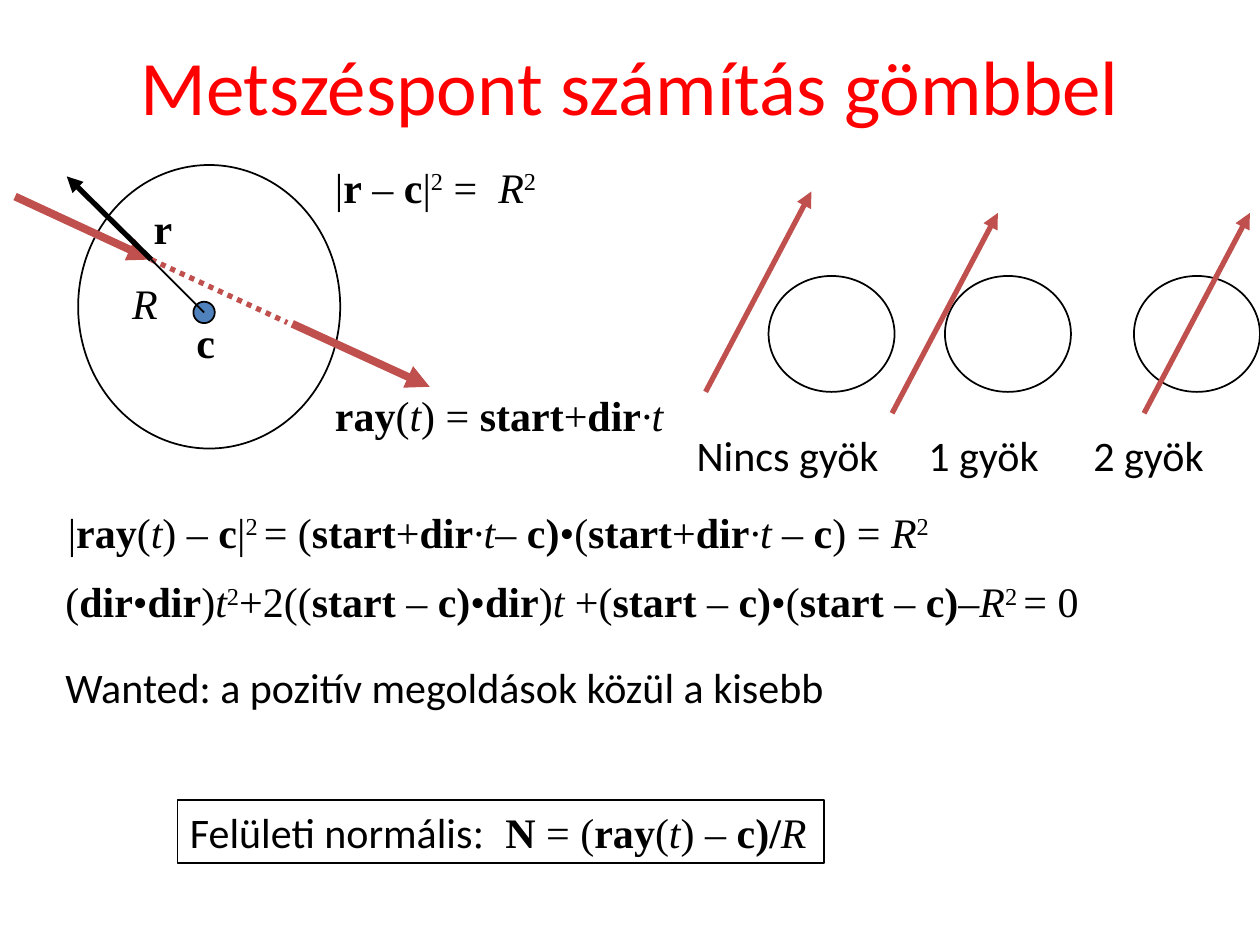
import pptx
import pptx.util
import pptx.dml.color
import pptx.enum.dml
import pptx.enum.shapes
import pptx.enum.text
import pptx.oxml
import pptx.oxml.ns
from pptx.util import Inches

THEME = {
    "title": "FF0000", "ink": "000000", "ray": "C0504D", "center": "4F81BD",
    "sans": "Calibri", "serif": "Times New Roman",
    "title_size": 44, "body_size": 24,
    "thin": 1, "medium": 3, "thick": 4.5,
}

TITLE = "Metszéspont számítás gömbbel"
SPHERE = [("|", ""), ("r", "b"), (" – ", ""), ("c", "b"), ("|", ""), ("2", "^"),
          (" =  ", ""), ("R", "i"), ("2", "^")]
RAY_T = [("ray", "b"), ("(", ""), ("t", "i"), (")", "")]
START_DIR = [("start", "b"), ("+", ""), ("dir", "b"), ("·t", "i")]
START_C = [("start ", "b"), ("– ", ""), ("c)", "b")]
DIR = [("dir", "b")]
DOT = [("•", "")]
RAY = RAY_T + [(" = ", "")] + START_DIR
SUBSTITUTED = ([("|", "")] + RAY_T + [(" – ", ""), ("c", "b"), ("|", ""), ("2 ", "^"), ("= (", "")]
               + START_DIR + [("– ", ""), ("c)", "b"), ("•(", "")]
               + START_DIR + [(" – ", ""), ("c", "b"), (") = ", ""), ("R", "i"), ("2", "^")])
QUADRATIC = ([("(", "")] + DIR + DOT + DIR + [(")", ""), ("t", "i"), ("2", "^"), ("+2((", "")]
             + START_C + DOT + DIR + [(")", ""), ("t ", "i"), ("+(", "")]
             + START_C + [("•(", "")] + START_C
             + [("–", ""), ("R", "i"), ("2 ", "^"), ("= 0", "")])
WANTED = [("Wanted: a pozitív megoldások közül a kisebb", "s")]
NORMAL = ([("Felületi normális", "s"), (":  ", ""), ("N", "b"), (" = (", "")] + RAY_T
          + [(" – ", ""), ("c)/", "b"), ("R", "i")])

LABELS = [
    ([("c", "b")], (1.46, 2.46, 0.35, 0.5)),
    ([("R", "i")], (0.95, 2.15, 0.4, 0.5)),
    (SPHERE, (2.56, 1.23, 1.84, 0.51)),
    ([("r", "b")], (1.12, 1.56, 0.35, 0.5)),
    (RAY, (2.56, 3.04, 2.83, 0.5)),
]
HIT = (1.2, 2.06)
CENTER = (1.62, 2.48)
DOT_SIZE = 0.17
SPHERE_LINES = [
    ((0.12, 1.56), HIT, "ray", "thick", True, False),
    ((2.32, 2.57), (3.41, 3.07), "ray", "thick", True, False),
    (HIT, (2.28, 2.56), "ray", "medium", False, True),
    (HIT, CENTER, "ink", "thin", False, False),
    (HIT, (0.53, 1.4), "ink", "medium", True, False),
]
CASES = [
    ("Nincs gyök", 5.43, 1.65, 6.1, (5.6, 3.11)),
    ("1 gyök", 7.27, 1.1, 7.5, (7.08, 3.28)),
    ("2 gyök", 8.58, 1.1, 9.0, (9.08, 3.28)),
]
CASE_RAY = (0.84, -1.59)

prs = pptx.Presentation()
prs.slide_width, prs.slide_height = Inches(10), Inches(7.5)
s = prs.slides.add_slide(prs.slide_layouts[6])


def color(name):
    return pptx.dml.color.RGBColor.from_string(THEME[name])


def add_runs(p, runs, size="body_size", ink="ink"):
    for text, style in runs:
        r = p.add_run()
        r.text = text
        r.font.name = THEME["sans" if "s" in style else "serif"]
        r.font.size = pptx.util.Pt(THEME[size])
        r.font.color.rgb = color(ink)
        r.font.bold = "b" in style
        r.font.italic = "i" in style
        if "^" in style:
            r._r.get_or_add_rPr().set("baseline", "30000")


def add_text(paragraphs, box, wrap=True):
    sp = s.shapes.add_textbox(*map(Inches, box))
    tf = sp.text_frame
    tf.word_wrap = wrap
    for i, runs in enumerate(paragraphs):
        p = tf.add_paragraph() if i else tf.paragraphs[0]
        add_runs(p, runs)
    return tf


def add_outline(kind, box, fill=None):
    sp = s.shapes.add_shape(kind, *map(Inches, box))
    sp.shadow.inherit = False
    if fill:
        sp.fill.solid()
        sp.fill.fore_color.rgb = color(fill)
    else:
        sp.fill.background()
    sp.line.color.rgb = color("ink")
    sp.line.width = pptx.util.Pt(THEME["thin"])
    return sp


def add_line(start, end, ink, width, arrow=True, dotted=False):
    c = s.shapes.add_connector(pptx.enum.shapes.MSO_CONNECTOR.STRAIGHT,
                               *map(Inches, start + end))
    c.line.color.rgb = color(ink)
    c.line.width = pptx.util.Pt(THEME[width])
    if dotted:
        c.line.dash_style = pptx.enum.dml.MSO_LINE.ROUND_DOT
    if arrow:
        tail = pptx.oxml.parse_xml(
            "<a:tailEnd %s type='triangle'/>" % pptx.oxml.ns.nsdecls("a"))
        c.line._get_or_add_ln().append(tail)
    c._element.spPr.append(
        pptx.oxml.parse_xml("<a:effectLst %s/>" % pptx.oxml.ns.nsdecls("a")))


OVAL = pptx.enum.shapes.MSO_SHAPE.OVAL

tf = add_text([], (0, 0.05, 10, 1.25))
tf.vertical_anchor = pptx.enum.text.MSO_ANCHOR.MIDDLE
tf.paragraphs[0].alignment = pptx.enum.text.PP_ALIGN.CENTER
add_runs(tf.paragraphs[0], [(TITLE, "s")], "title_size", "title")

sp = add_outline(pptx.enum.shapes.MSO_SHAPE.RECTANGLE, (1.41, 6.35, 5.13, 0.5))
tf = sp.text_frame
tf.word_wrap = True
tf.vertical_anchor = pptx.enum.text.MSO_ANCHOR.TOP
tf.paragraphs[0].alignment = pptx.enum.text.PP_ALIGN.LEFT
add_runs(tf.paragraphs[0], NORMAL)

add_outline(OVAL, (0.62, 1.31, 2.08, 2.25))
add_outline(OVAL, (CENTER[0] - DOT_SIZE / 2, CENTER[1] - DOT_SIZE / 2, DOT_SIZE, DOT_SIZE), "center")
for line in SPHERE_LINES:
    add_line(*line)
for runs, box in LABELS:
    add_text([runs], box, wrap=False)

for label, label_x, label_w, circle_x, start in CASES:
    add_outline(OVAL, (circle_x, 2.19, 1, 0.92))
    end = (start[0] + CASE_RAY[0], start[1] + CASE_RAY[1])
    add_line(start, end, "ray", "medium")
    add_text([[(label, "s")]], (label_x, 3.36, label_w, 0.5), wrap=False)

add_text([SUBSTITUTED], (0.44, 3.97, 9.27, 0.5))
tf = add_text([QUADRATIC, WANTED], (0.42, 4.52, 9.58, 1.17))
tf.paragraphs[1].space_before = pptx.util.Pt(20)

prs.save("out.pptx")
